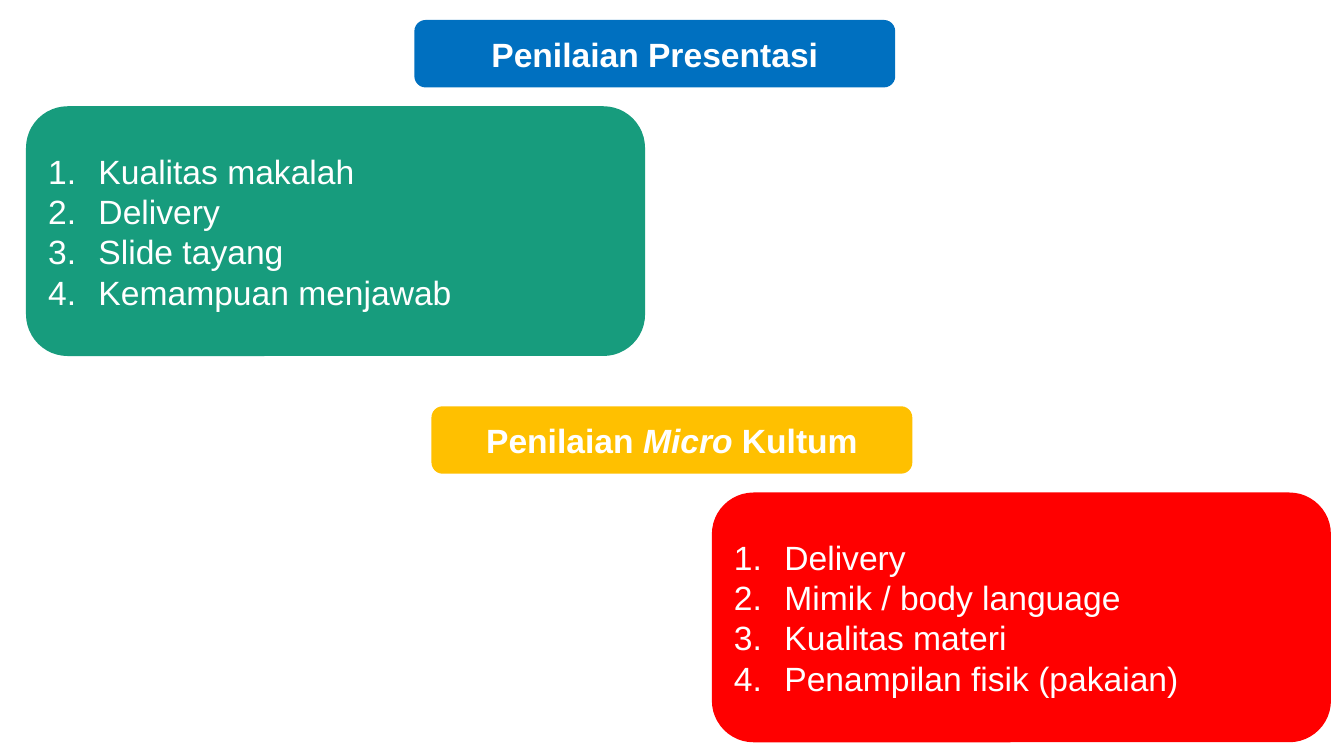
from lxml.etree import SubElement
from pptx import Presentation
from pptx.dml.color import RGBColor
from pptx.enum.shapes import MSO_SHAPE
from pptx.enum.text import MSO_ANCHOR, PP_ALIGN
from pptx.oxml.ns import qn
from pptx.util import Pt

# Content: heading runs are (text, italic)
PARTS = [
    {"head": [("Penilaian Presentasi", False)],
     "items": ["Kualitas makalah", "Delivery", "Slide tayang",
               "Kemampuan menjawab"],
     "tint": ("blue", "green"), "left": (296, 18.6), "top": 14.3},
    {"head": [("Penilaian ", False), ("Micro", True), (" Kultum", False)],
     "items": ["Delivery", "Mimik / body language", "Kualitas materi",
               "Penampilan fisik (pakaian)"],
     "tint": ("gold", "red"), "left": (308.2, 508.5), "top": 290.2},
]
COLORS = {"blue": "0070C0", "green": "179C7D", "gold": "FFC000",
          "red": "FF0000", "white": "FFFFFF"}
HEAD = (343.5, 48.2)
CARD = (442.2, 178.4)
STEP = 61.6  # heading top to card top
INDENT = 36
FONT = {"name": "Arial", "size": Pt(24)}
FRAME = {"word_wrap": True, "vertical_anchor": MSO_ANCHOR.MIDDLE}


def color(key):
    return RGBColor.from_string(COLORS[key])


def add_box(left, top, size, tint):
    box = slide.shapes.add_shape(MSO_SHAPE.ROUNDED_RECTANGLE,
                                 Pt(left), Pt(top), *map(Pt, size))
    box.shadow.inherit = False
    box.fill.solid()
    box.fill.fore_color.rgb = color(tint)
    box.line.fill.background()
    for key, val in FRAME.items():
        setattr(box.text_frame, key, val)
    return box.text_frame


def write(para, text, bold=False, italic=False):
    run = para.add_run()
    run.text = text
    for key, val in {**FONT, "bold": bold, "italic": italic}.items():
        setattr(run.font, key, val)
    run.font.color.rgb = color("white")


def number(para):
    props = para._p.get_or_add_pPr()
    props.set("marL", str(Pt(INDENT)))
    props.set("indent", str(-Pt(INDENT)))
    SubElement(props, qn("a:buFont"), typeface="+mj-lt")
    SubElement(props, qn("a:buAutoNum"), type="arabicPeriod")


deck = Presentation()
deck.slide_width, deck.slide_height = Pt(960), Pt(540)
slide = deck.slides.add_slide(deck.slide_layouts[6])

for part in PARTS:
    # Heading
    frame = add_box(part["left"][0], part["top"], HEAD, part["tint"][0])
    para = frame.paragraphs[0]
    para.alignment = PP_ALIGN.CENTER
    for text, italic in part["head"]:
        write(para, text, True, italic)

    # Numbered card
    frame = add_box(part["left"][1], part["top"] + STEP, CARD,
                    part["tint"][1])
    for row, text in enumerate(part["items"]):
        para = frame.add_paragraph() if row else frame.paragraphs[0]
        para.alignment = PP_ALIGN.LEFT
        number(para)
        write(para, text)

deck.save("out.pptx")
